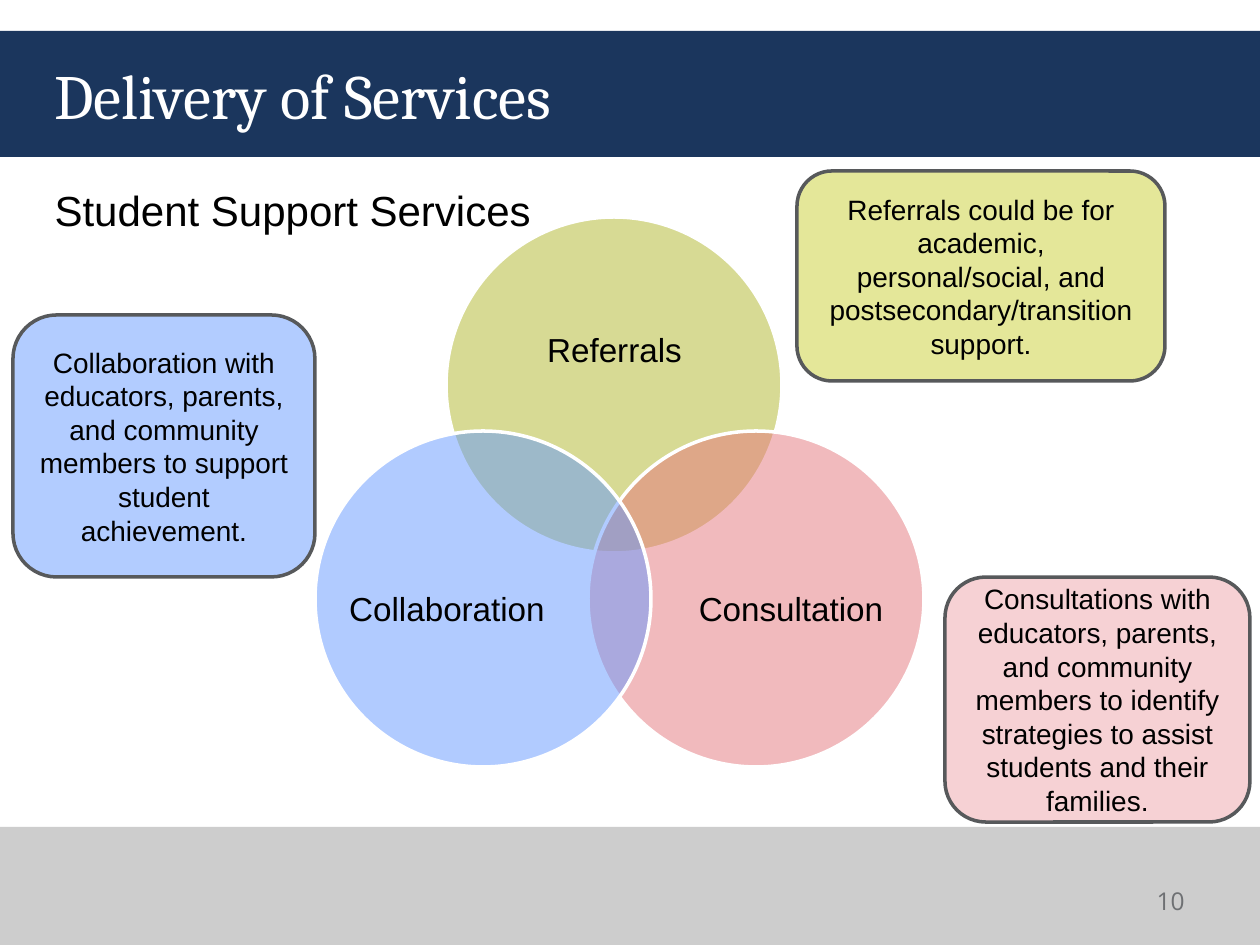
"""Builds the Delivery of Services slide with its three-circle diagram."""
import dataclasses

import lxml.etree
import pptx
import pptx.dml.color
import pptx.enum.shapes
import pptx.enum.text
import pptx.oxml.ns
import pptx.util

KIND = pptx.enum.shapes.MSO_SHAPE
ALIGN = pptx.enum.text.PP_ALIGN
MIDDLE = pptx.enum.text.MSO_ANCHOR.MIDDLE
qn = pptx.oxml.ns.qn


@dataclasses.dataclass(frozen=True)
class Theme:
    """Colours, fonts and type sizes of the slide."""
    navy: str = "1B365D"
    gray: str = "CDCDCD"
    white: str = "FFFFFF"
    black: str = "000000"
    edge: str = "57595B"
    dim: str = "6E7073"
    olive: str = "B1B62B"
    rose: str = "E5767D"
    blue: str = "6599FF"
    lime: str = "E4E799"
    pink: str = "F6D1D4"
    sky: str = "B2CCFF"
    serif: str = "Cambria"
    sans: str = "Arial"
    small: str = "Open Sans"
    head: int = 36
    body: int = 24
    label: int = 19
    note: int = 16
    page: int = 14


def px(*sides):
    """Turn pixel lengths into EMU."""
    return [pptx.util.Emu(round(side * 914400 / 126)) for side in sides]


def rgb(code):
    """Turn a hex code into a colour."""
    return pptx.dml.color.RGBColor.from_string(code)


class Deck:
    """Holds the theme and the current slide."""

    def __init__(self, theme):
        """Start a deck with one title and content slide."""
        self.theme = theme
        self.file = pptx.Presentation()
        self.file.slide_width, self.file.slide_height = px(1260, 945)
        self.slide = self.file.slides.add_slide(self.file.slide_layouts[1])
        self.shapes = self.slide.shapes

    def label(self, shape, text, size, color, face, align):
        """Set one styled paragraph in a shape."""
        frame = shape.text_frame
        frame.word_wrap = True
        frame.text = text
        para = frame.paragraphs[0]
        para.alignment = align
        para.space_before = pptx.util.Pt(0)
        para.font.size = pptx.util.Pt(size)
        para.font.name = face
        para.font.color.rgb = rgb(color)
        return para

    def shape(self, home, kind, box, fill, line=None):
        """Add a filled shape with an optional outline."""
        item = home.add_shape(kind, *px(*box))
        item.shadow.inherit = False
        item.fill.solid()
        item.fill.fore_color.rgb = rgb(fill)
        if line:
            item.line.color.rgb = rgb(line)
            item.line.width = pptx.util.Pt(2)
        else:
            item.line.fill.background()
        return item

    def band(self, top, height, fill):
        """Add a full-width band behind the placeholders."""
        node = self.shape(self.shapes, KIND.RECTANGLE,
                          (0, top, 1260, height), fill)._element
        node.getparent().insert(2, node)

    def place(self, item, box):
        """Move a placeholder to a box."""
        item.left, item.top, item.width, item.height = px(*box)

    def title(self, text, box):
        """Fill the title placeholder."""
        item = self.shapes.title
        self.place(item, box)
        item.text_frame.vertical_anchor = MIDDLE
        self.label(item, text, self.theme.head, self.theme.white,
                   self.theme.serif, ALIGN.LEFT)

    def body(self, text, box):
        """Fill the body placeholder without a bullet."""
        item = self.slide.placeholders[1]
        self.place(item, box)
        para = self.label(item, text, self.theme.body, self.theme.black,
                          self.theme.sans, ALIGN.LEFT)
        props = para._p.get_or_add_pPr()
        props.set("marL", "0")
        props.set("indent", "0")
        bullet = lxml.etree.Element(qn("a:buNone"))
        props.find(qn("a:defRPr")).addprevious(bullet)

    def page(self, text, box):
        """Add the page number."""
        item = self.shapes.add_textbox(*px(*box))
        item.text_frame.vertical_anchor = MIDDLE
        self.label(item, text, self.theme.page, self.theme.dim,
                   self.theme.small, ALIGN.RIGHT)

    def venn(self, size, parts):
        """Add a group of half-clear circles with labels."""
        home = self.shapes.add_group_shape().shapes
        for text, left, top, fill, box in parts:
            disc = self.shape(home, KIND.OVAL, (left, top, size, size),
                              fill, self.theme.white)
            tint = disc._element.spPr.find(qn("a:solidFill"))[0]
            lxml.etree.SubElement(tint, qn("a:alpha"), val="50000")
            item = home.add_textbox(*px(*box))
            frame = item.text_frame
            frame.vertical_anchor = MIDDLE
            frame.margin_left = frame.margin_right = 0
            frame.margin_top = frame.margin_bottom = 0
            para = self.label(item, text, self.theme.label, self.theme.black,
                              self.theme.sans, ALIGN.CENTER)
            para.line_spacing = 0.9

    def note(self, text, box, fill):
        """Add a rounded note."""
        item = self.shape(self.shapes, KIND.ROUNDED_RECTANGLE, box, fill,
                          self.theme.edge)
        item.text_frame.vertical_anchor = MIDDLE
        self.label(item, text, self.theme.note, self.theme.black,
                   self.theme.sans, ALIGN.CENTER)


def main():
    """Build and save the slide."""
    theme = Theme()
    deck = Deck(theme)
    deck.band(827, 118, theme.gray)
    deck.band(31, 126, theme.navy)
    deck.title("Delivery of Services", (42, 31, 1144, 126))
    deck.body("Student Support Services", (42, 178, 1155, 624))
    deck.page("10", (1134, 876, 63, 50))
    deck.venn(336, [
        ("Referrals", 446, 217, theme.olive, (491, 276, 247, 151)),
        ("Consultation", 588, 431, theme.rose, (690, 518, 202, 185)),
        ("Collaboration", 315, 431, theme.blue, (346, 518, 202, 185)),
    ])
    deck.note("Referrals could be for academic, personal/social, and "
              "postsecondary/transition support.",
              (797, 171, 368, 210), theme.lime)
    deck.note("Consultations with educators, parents, and community members "
              "to identify strategies to assist students and their families.",
              (945, 577, 305, 245), theme.pink)
    deck.note("Collaboration with educators, parents, and community members "
              "to support student achievement.",
              (13, 315, 302, 262), theme.sky)
    deck.file.save("out.pptx")


if __name__ == "__main__":
    main()
